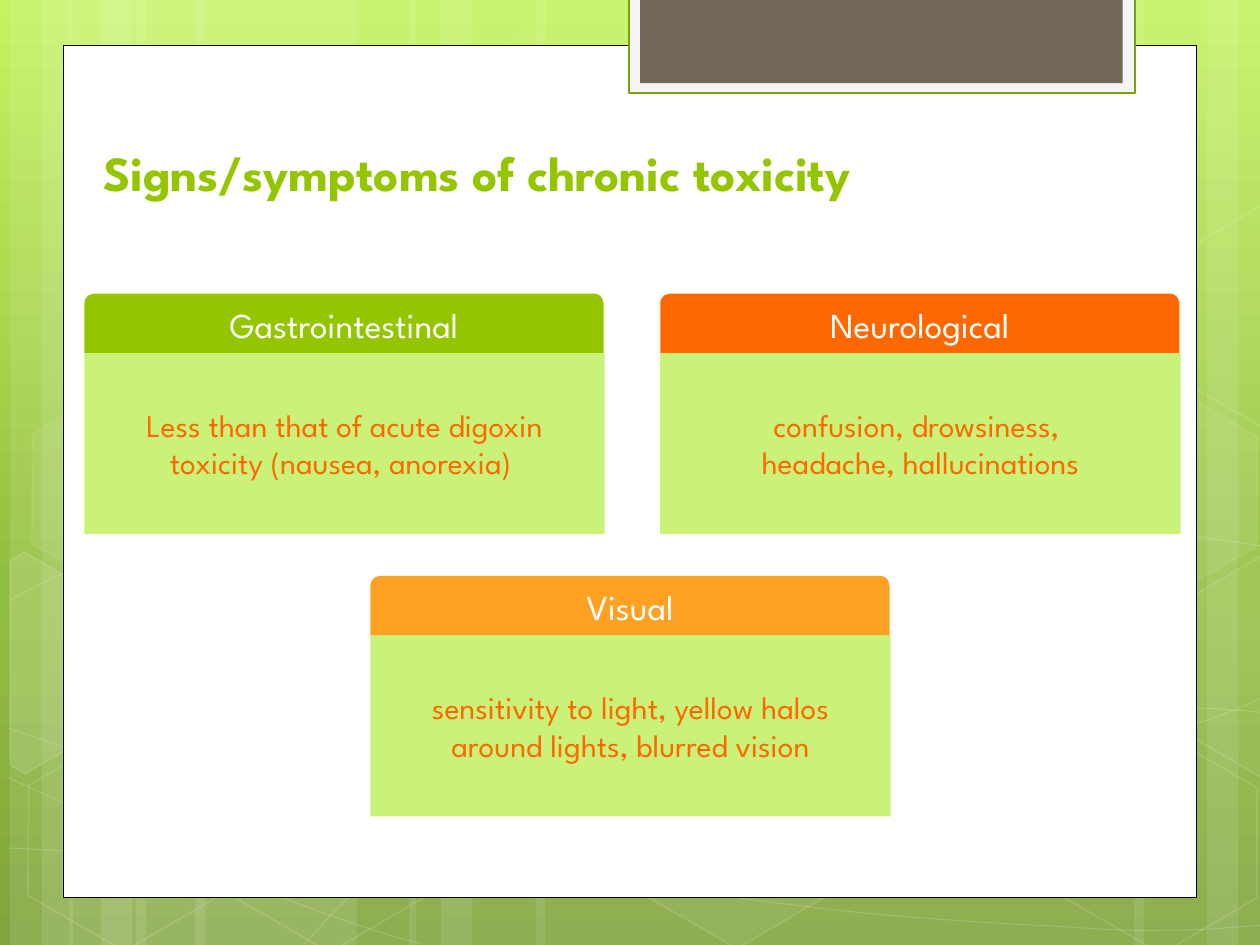
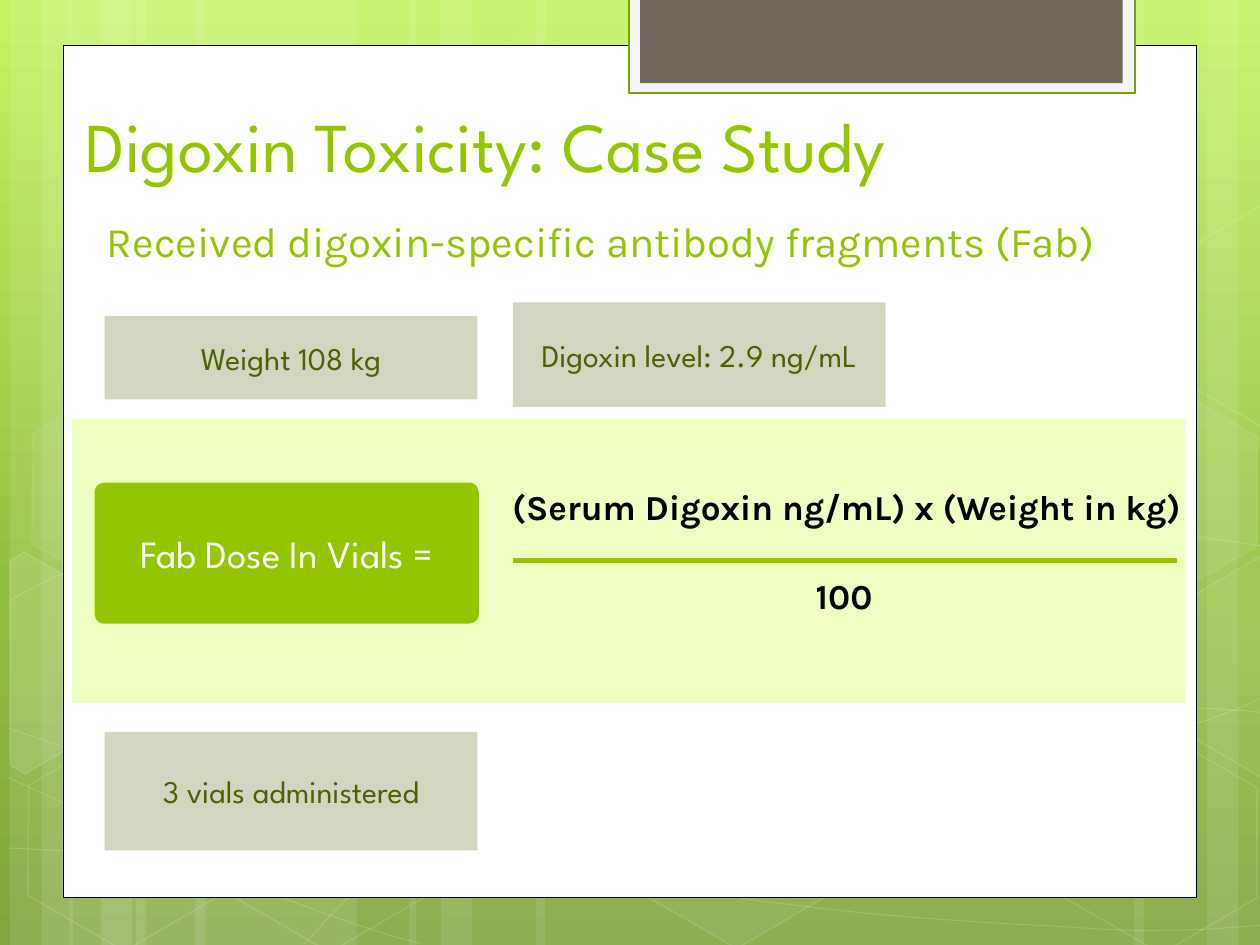
"""Build two slides on digoxin toxicity."""
import math
from dataclasses import dataclass

from lxml import etree
from pptx import Presentation
from pptx import util as u
from pptx.dml.color import RGBColor
from pptx.enum import shapes, text
from pptx.oxml.ns import qn

SHAPE = shapes.MSO_SHAPE
CENTER, LEFT = text.PP_ALIGN.CENTER, text.PP_ALIGN.LEFT
MIDDLE, TOP, BOTTOM = text.MSO_ANCHOR.MIDDLE, text.MSO_ANCHOR.TOP, text.MSO_ANCHOR.BOTTOM


@dataclass(frozen=True)
class Theme:
    """Colours, fonts and type sizes shared by the slides."""
    head: str = "League Spartan"
    body: str = "Karla"
    white: str = "FFFFFF"
    black: str = "000000"
    green: str = "94C600"
    orange: str = "FF6700"
    amber: str = "FEA022"
    card: str = "CAF278"
    formula: str = "EFFFC1"
    fact: str = "D3D5C1"
    fact_text: str = "4A6300"
    tab: str = "71685A"
    tab_edge: str = "74A510"
    tab_frame: str = "F5F5F5"
    sky: tuple = ((0, "C3F35F"), (62, "93BF3F"), (100, "81A53E"))
    title: int = 40
    heading: int = 28
    subtitle: int = 24
    label: int = 22
    strong: int = 20
    small: int = 18


T = Theme()
TILT = 30

BAND_SETS = ((0.08, 1.75), (0.55, 1.75), (3.25, 3.08))
RIGHT_BANDS = ((7.33, 1.75), (9.58, 0.5), (9, 0.83))

CURVES = (
    ((0.07, 6.73), (0.61, 6.76), (1.15, 6.79), (1.9, 6.78), (2.65, 6.77),
     (3.58, 6.75), (4.58, 6.65), (5.58, 6.55), (7, 6.36), (7.92, 6.17),
     (8.83, 5.98), (9.77, 5.68), (10.07, 5.51)),
    ((0.07, 4.77), (0.36, 4.61), (0.65, 4.46), (1.21, 4.31), (1.78, 4.16),
     (2.59, 3.94), (3.47, 3.87), (4.36, 3.8), (5.44, 3.79), (6.54, 3.87),
     (7.64, 3.95), (9.47, 4.26), (10.07, 4.34)),
    ((0.06, 6.17), (1.27, 6.72), (2.47, 7.27), (3.34, 7.49)),
    ((0.07, 5.78), (0.38, 5.89), (0.7, 6), (1.28, 6.16), (1.86, 6.31),
     (2.73, 6.56), (3.57, 6.73), (4.4, 6.9), (5.45, 7.08), (6.28, 7.18),
     (7.11, 7.29), (8, 7.33), (8.53, 7.36), (9.05, 7.4), (9.19, 7.38),
     (9.45, 7.38), (9.71, 7.37), (9.89, 7.35), (10.07, 7.34)),
    ((2.42, 7.49), (2.6, 7.29), (2.78, 7.09), (3.02, 6.91), (3.26, 6.73),
     (3.6, 6.53), (3.88, 6.39), (4.16, 6.25), (4.33, 6.19), (4.7, 6.09),
     (5.06, 5.99), (5.73, 5.85), (6.08, 5.78), (6.44, 5.71), (6.49, 5.71),
     (6.8, 5.69), (7.11, 5.66), (7.6, 5.63), (7.94, 5.62), (8.29, 5.61),
     (8.86, 5.62), (8.86, 5.62), (9.08, 5.62), (9.31, 5.62), (9.53, 5.62),
     (9.71, 5.63), (9.88, 5.64), (9.97, 5.65), (10.06, 5.66), (10.03, 5.65),
     (10.06, 5.66)),
)

HEXAGONS = (
    (3.34, 0.36, 4, 8), (4.97, 5.89, 6, 12), (0.11, 5.91, 0, 12),
    (0.14, 3.12, 7, 8), (1.74, 5.92, 0, 12), (7.53, 4.53, 10, 12),
    (8.34, 5.93, 0, 12), (8.34, 3.14, 7, 8),
)

CUT_HEXAGONS = (
    (10, (0.36, 5.35),
     ((0.08, 4.45), (0.19, 4.38), (0.96, 4.82), (0.95, 5.7), (0.2, 6.14), (0.08, 6.07))),
    (4, (9.85, 5.2),
     ((9.26, 4.85), (10.01, 4.41), (10.09, 4.46), (10.09, 6.13), (10.02, 6.17), (9.26, 5.73))),
    (0, (9.85, 2.41),
     ((9.26, 2.07), (10.01, 1.63), (10.1, 1.68), (10.09, 3.35), (10.02, 3.39), (9.26, 2.95))),
)


def set_all(obj, values):
    """Set attributes of an object from a dict."""
    for name, value in values.items():
        setattr(obj, name, value)


def box(x, y, w, h):
    """Return a frame in inches as lengths."""
    return [u.Inches(v) for v in (x, y, w, h)]


def set_alpha(sp, where, percent):
    """Make the solid colour under the given path translucent."""
    for clr in sp._element.spPr.xpath(where + "/a:solidFill/a:srgbClr"):
        etree.SubElement(clr, qn("a:alpha"), val=str(percent * 1000))


def paint(sp, fill=None, alpha=100, line=None, width=1, line_alpha=100):
    """Give a shape its fill and line, without a shadow."""
    sp.shadow.inherit = False
    if fill and alpha:
        sp.fill.solid()
        sp.fill.fore_color.rgb = RGBColor.from_string(fill)
    else:
        sp.fill.background()
    if line:
        sp.line.color.rgb = RGBColor.from_string(line)
        sp.line.width = u.Pt(width)
    else:
        sp.line.fill.background()
    for where, percent in ((".", alpha), ("./a:ln", line_alpha)):
        if percent < 100:
            set_alpha(sp, where, percent)
    return sp


def shape(s, frame, fill, kind=SHAPE.RECTANGLE, **look):
    """Add a painted preset shape."""
    return paint(s.shapes.add_shape(kind, *box(*frame)), fill, **look)


def write(sp, words, size, color, name=T.head, bold=False, align=CENTER, anchor=MIDDLE, spacing=1.0):
    """Put one styled paragraph in a shape."""
    tf = sp.text_frame
    set_all(tf, {"word_wrap": True, "vertical_anchor": anchor})
    p = tf.paragraphs[0]
    p.text = words
    set_all(p, {"alignment": align, "line_spacing": spacing})
    for r in p.runs:
        set_all(r.font, {"name": name, "size": u.Pt(size), "bold": bold})
        r.font.color.rgb = RGBColor.from_string(color)


def label(s, frame, words, size, color, **style):
    """Add a text box."""
    write(s.shapes.add_textbox(*box(*frame)), words, size, color, **style)


def outline(s, points, close, **look):
    """Add a freeform through points given in inches."""
    pts = [(u.Inches(x), u.Inches(y)) for x, y in points]
    fb = s.shapes.build_freeform(*pts[0])
    fb.add_line_segments(pts[1:], close=close)
    return paint(fb.convert_to_shape(), line=T.white, **look)


def curve(s, points):
    """Add a chain of cubic curves through end and control points."""
    sp = outline(s, points, False, width=0.5, line_alpha=20)
    lines = sp._element.spPr.xpath(".//a:lnTo")
    for i in range(0, len(lines), 3):
        cubic = etree.Element(qn("a:cubicBezTo"))
        lines[i].addprevious(cubic)
        for ln in lines[i:i + 3]:
            cubic.append(ln[0])
            ln.getparent().remove(ln)


def cut_hexagon(s, alpha, center, points):
    """Add a tilted outline that turns about its center."""
    cx, cy = center
    cos, sin = math.cos(math.radians(TILT)), math.sin(math.radians(TILT))
    level = [(cx + (x - cx) * cos + (y - cy) * sin, cy - (x - cx) * sin + (y - cy) * cos)
             for x, y in points]
    outline(s, level, True, fill=T.white, alpha=alpha, line_alpha=12).rotation = TILT


def sky(s):
    """Fill the slide background with the vertical gradient."""
    fill = s.background.fill
    fill.gradient()
    fill.gradient_angle = 270
    stops = next(s._element.iter(qn("a:gsLst")))
    for stop in list(stops):
        stops.remove(stop)
    for pos, color in T.sky:
        gs = etree.SubElement(stops, qn("a:gs"), pos=str(pos * 1000))
        etree.SubElement(gs, qn("a:srgbClr"), val=color)


def pattern(s):
    """Draw the translucent bands, curves and hexagons."""
    bands = [(base + dx, w) for base, wide in BAND_SETS
             for dx, w in ((1, wide), (0, 0.5), (0.25, 0.83))]
    for x, w in (*bands, *RIGHT_BANDS):
        shape(s, (x, 0, w, 7.5), T.white, alpha=10)
    for points in CURVES:
        curve(s, points)
    for x, y, alpha, line_alpha in HEXAGONS:
        sp = shape(s, (x, y, 1.75, 1.52), T.white, SHAPE.HEXAGON, alpha=alpha,
                   line=T.white, line_alpha=line_alpha)
        sp.adjustments[0] = 0.285
        sp.rotation = TILT
    for cut in CUT_HEXAGONS:
        cut_hexagon(s, *cut)


def new_slide(prs):
    """Add a slide with the shared backdrop, page and tab."""
    s = prs.slides.add_slide(prs.slide_layouts[6])
    sky(s)
    pattern(s)
    shape(s, (0.5, 0.36, 9, 6.76), T.white, line=T.black, width=0.5)
    shape(s, (4.99, -0.02, 4.02, 0.76), T.tab_frame, line=T.tab_edge, width=1.25)
    shape(s, (5.08, -0.02, 3.83, 0.68), T.tab)
    return s


def symptom_card(s, x, y, color, name, signs):
    """Add a symptom group with a rounded header."""
    write(shape(s, (x, y + 0.47, 4.13, 1.44), T.card), signs, T.small, T.orange)
    header = shape(s, (x, y, 4.12, 0.47), color, SHAPE.ROUND_2_SAME_RECTANGLE)
    write(header, name, T.strong, T.white)


def fact(s, x, y, h, words):
    """Add a case fact box."""
    write(shape(s, (x, y, 2.96, h), T.fact), words, T.small, T.fact_text)


def rule(s, x1, x2, y, color, width):
    """Add a horizontal line."""
    ln = s.shapes.add_connector(shapes.MSO_CONNECTOR.STRAIGHT, *box(x1, y, x2, y))
    ln.line.color.rgb = RGBColor.from_string(color)
    ln.line.width = u.Pt(width)
    etree.SubElement(ln._element.spPr, qn("a:effectLst"))


def symptoms_slide(prs):
    """Build the slide of chronic toxicity symptoms."""
    s = new_slide(prs)
    label(s, (0.72, 1.08, 8.12, 0.57), "Signs/symptoms of chronic toxicity", T.heading, T.green,
          bold=True, align=LEFT, anchor=TOP)
    top = 2.33
    symptom_card(s, 0.67, top, T.green, "Gastrointestinal",
                 "Less than that of acute digoxin toxicity (nausea, anorexia) ")
    symptom_card(s, 5.24, top, T.orange, "Neurological",
                 "confusion, drowsiness, \vheadache, hallucinations")
    symptom_card(s, 2.94, top + 2.24, T.amber, "Visual",
                 "sensitivity to light, yellow halos around lights, blurred vision")


def case_slide(prs):
    """Build the case study slide with the dose formula."""
    s = new_slide(prs)
    label(s, (0.58, 0.66, 8.62, 0.87), "Digoxin Toxicity: Case Study", T.title, T.green,
          align=LEFT, anchor=BOTTOM)
    shape(s, (0.57, 3.32, 8.84, 2.26), T.formula)
    label(s, (0.75, 1.66, 8.28, 0.51), "Received digoxin-specific antibody fragments (Fab)",
          T.subtitle, T.green, name=T.body, align=LEFT, anchor=TOP)
    term = {"name": T.body, "bold": True, "spacing": 0.9}
    label(s, (3.74, 3.67, 5.96, 0.74), "(Serum Digoxin ng/mL) x (Weight in kg)",
          T.strong, T.black, **term)
    dose = shape(s, (0.75, 3.83, 3.05, 1.12), T.green, SHAPE.ROUNDED_RECTANGLE)
    dose.adjustments[0] = 0.07
    write(dose, "Fab Dose In Vials =", T.label, T.white)
    label(s, (4.07, 4.38, 5.26, 0.74), "100", T.strong, T.black, **term)
    rule(s, 4.07, 9.34, 4.45, T.green, 3)
    fact(s, 0.83, 2.51, 0.66, "Weight 108 kg")
    fact(s, 4.07, 2.4, 0.83, "Digoxin level: 2.9 ng/mL")
    fact(s, 0.83, 5.81, 0.94, "3 vials administered")


def main():
    """Build and save the presentation."""
    prs = Presentation()
    set_all(prs, {"slide_width": u.Inches(10), "slide_height": u.Inches(7.5)})
    symptoms_slide(prs)
    case_slide(prs)
    prs.save("out.pptx")


if __name__ == "__main__":
    main()
